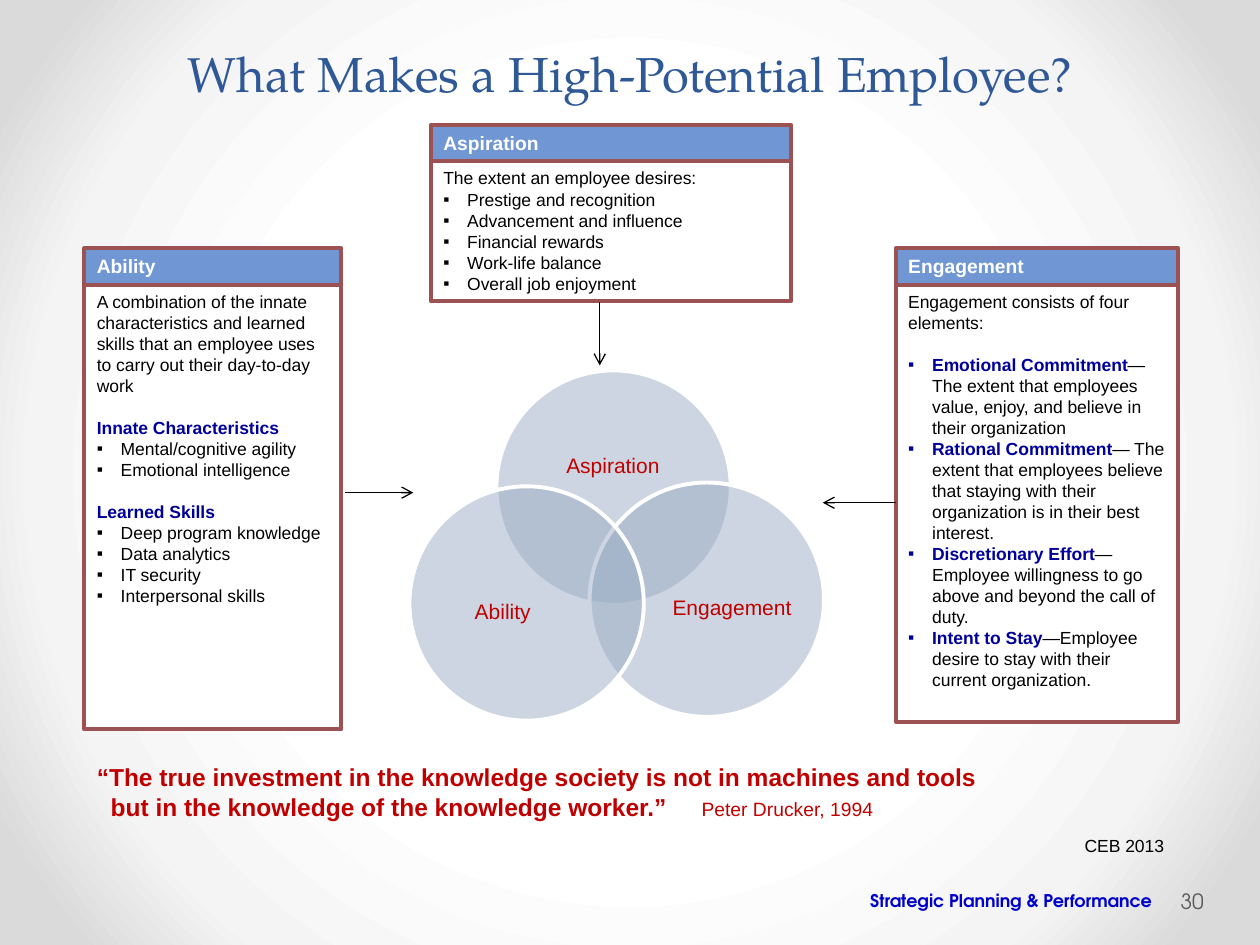
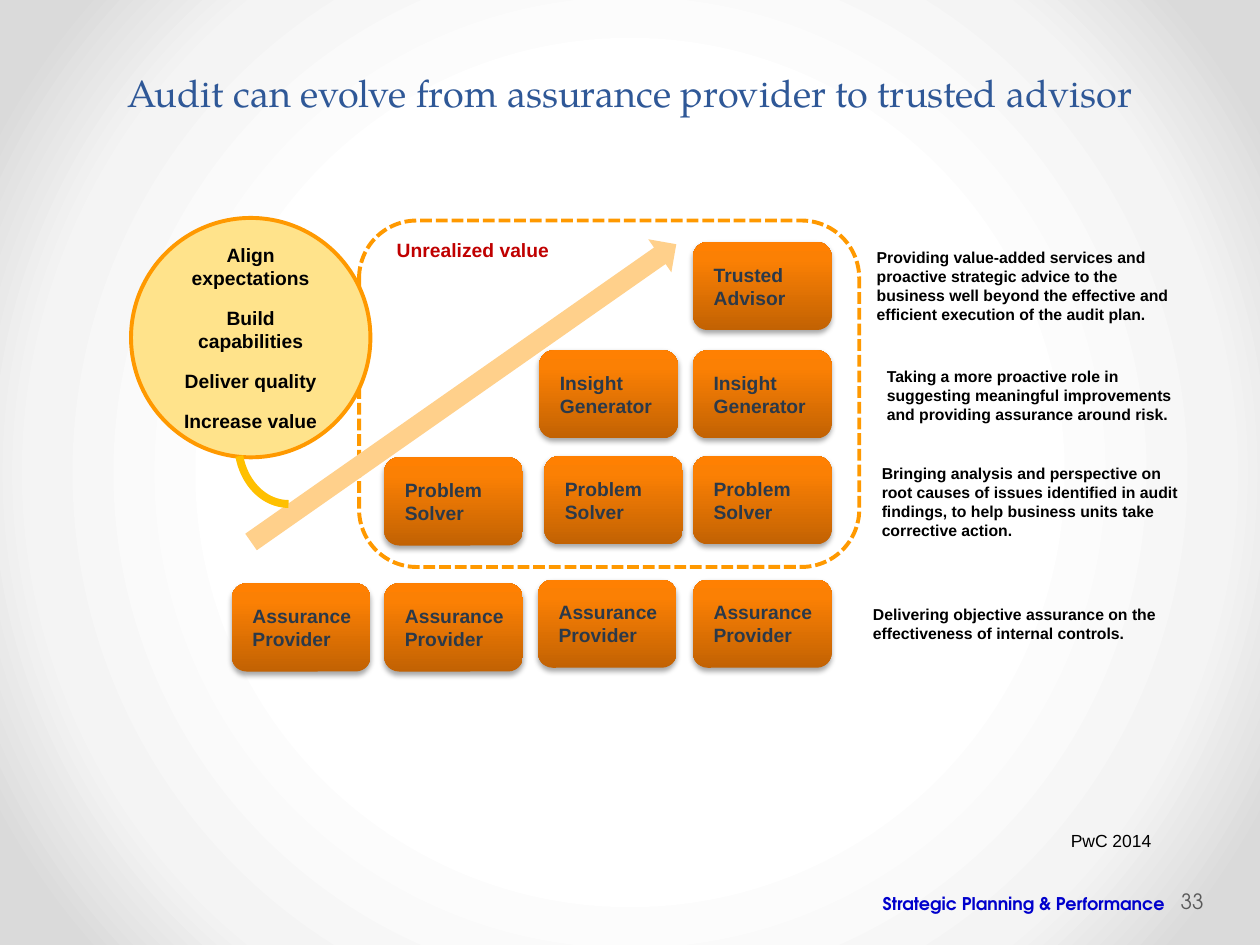
import pptx
import pptx.util
import pptx.dml.color
import pptx.enum.dml
import pptx.enum.shapes
import pptx.enum.text
import pptx.oxml
import pptx.oxml.ns
from dataclasses import dataclass
from lxml import etree

Inches = pptx.util.Inches
Pt = pptx.util.Pt
qn = pptx.oxml.ns.qn
SHAPE = pptx.enum.shapes.MSO_SHAPE
ALIGN = pptx.enum.text.PP_ALIGN
ANCHOR = pptx.enum.text.MSO_ANCHOR

COLORS = {
    "title": "2F5897", "footer": "0000CC", "number": "595959",
    "black": "000000", "white": "FFFFFF", "red": "C00000", "navy": "000099",
    "card_line": "9C5252", "card_head": "7097D3", "venn": "9BADC4",
    "step_text": "2B3949", "orange": "FF9900", "goal": "FFE38B",
    "growth": "FFD08B", "link": "FFC000",
}
BACKDROP = [(50, "FFFFFF"), (76, "F4F4F4"), (92, "DADADA")]
STEP_STOPS = [(0, "C26203"), (80, "FB8004"), (100, "FF8002")]
STEP_SHADOW = {"blurRad": 3.1, "dist": 1.8}


@dataclass
class Line:
    text: str
    lead: str = ""
    bullet: bool = False
    heading: bool = False
    gap: float = 0


CARDS = [
    ("Aspiration", (3.42, 0.99, 2.86, 1.11), [
        Line("The extent an employee desires:"),
        Line("Prestige and recognition", bullet=True),
        Line("Advancement and influence", bullet=True),
        Line("Financial rewards", bullet=True),
        Line("Work-life balance", bullet=True),
        Line("Overall job enjoyment", bullet=True),
    ]),
    ("Ability", (0.67, 1.97, 2.04, 3.53), [
        Line("A combination of the innate characteristics and learned skills "
             "that an employee uses to carry out their day-to-day work"),
        Line("Innate Characteristics", heading=True, gap=12),
        Line("Mental/cognitive agility", bullet=True),
        Line("Emotional intelligence", bullet=True),
        Line("Learned Skills", heading=True, gap=12),
        Line("Deep program knowledge", bullet=True),
        Line("Data analytics", bullet=True),
        Line("IT security", bullet=True),
        Line("Interpersonal skills", bullet=True),
    ]),
    ("Engagement", (7.11, 1.97, 2.24, 3.47), [
        Line("Engagement consists of four elements:"),
        Line("— The extent that employees value, enjoy, and believe in their "
             "organization", "Emotional Commitment", bullet=True, gap=12),
        Line("— The extent that employees believe that staying with their "
             "organization is in their best interest.",
             "Rational Commitment", bullet=True),
        Line("— Employee willingness to go above and beyond the call of duty.",
             "Discretionary Effort", bullet=True),
        Line("—Employee desire to stay with their current organization.",
             "Intent to Stay", bullet=True),
    ]),
]
VENN = [
    ("Aspiration", (3.94, 2.94), (4.18, 3.27, 1.37, 0.84)),
    ("Engagement", (4.68, 3.83), (5.25, 4.31, 1.12, 1.02)),
    ("Ability", (3.25, 3.86), (3.43, 4.34, 1.12, 1.02)),
]
POINTERS = [((7.11, 3.99), (6.53, 3.99)), ((4.76, 2.4), (4.76, 2.9)),
            ((2.74, 3.91), (3.28, 3.91))]
STEPS = [
    ("Assurance Provider", [(1.84, 4.63), (3.05, 4.63), (4.27, 4.6), (5.5, 4.6)]),
    ("Problem Solver", [(3.05, 3.63), (4.32, 3.62), (5.5, 3.62)]),
    ("Insight Generator", [(4.28, 2.78), (5.5, 2.78)]),
    ("Trusted Advisor", [(5.5, 1.92)]),
]
ROLES = [
    ((6.86, 1.92, 2.67, 0.71),
     "Providing value-added services and proactive strategic advice to the "
     "business well beyond the effective and efficient execution of the audit plan."),
    ((6.94, 2.86, 2.6, 0.56),
     "Taking a more proactive role in suggesting meaningful improvements and "
     "providing assurance around risk."),
    ((6.9, 3.63, 2.67, 0.71),
     "Bringing analysis and perspective on root causes of issues identified in "
     "audit findings, to help business units take corrective action."),
    ((6.83, 4.75, 2.6, 0.4),
     "Delivering objective assurance on the effectiveness of internal controls."),
]
GOALS = ["Align expectations", "Build capabilities", "Deliver quality",
         "Increase value"]


def rgb(name):
    return pptx.dml.color.RGBColor.from_string(COLORS[name])


def inches(values):
    return [Inches(value) for value in values]


def sub(parent, tag, **attributes):
    return etree.SubElement(parent, qn(tag), attributes)


def style_run(run, size, color, bold=False, font="Arial"):
    run.font.size = Pt(size)
    run.font.name = font
    run.font.bold = bold
    run.font.color.rgb = rgb(color)


def add_bullet(paragraph):
    properties = paragraph._p.get_or_add_pPr()
    properties.set("marL", str(Inches(0.19)))
    properties.set("indent", str(-Inches(0.19)))
    sub(properties, "a:buFont", typeface="Arial")
    sub(properties, "a:buChar", char="▪")


def write(frame, lines, size, color="black", bold=False, align=ALIGN.LEFT,
          anchor=ANCHOR.TOP, insets=(0.1, 0.05, 0.1, 0.05), font="Arial", wrap=True):
    frame.word_wrap = wrap
    frame.vertical_anchor = anchor
    (frame.margin_left, frame.margin_top,
     frame.margin_right, frame.margin_bottom) = inches(insets)
    for index, line in enumerate(lines):
        paragraph = frame.add_paragraph() if index else frame.paragraphs[0]
        paragraph.text = line.lead or line.text
        paragraph.alignment = align
        if line.gap:
            paragraph.space_before = Pt(line.gap)
        if line.bullet:
            add_bullet(paragraph)
        emphasised = bool(line.lead) or line.heading
        style_run(paragraph.runs[0], size, "navy" if emphasised else color,
                  bold or emphasised, font)
        if line.lead:
            rest = paragraph.add_run()
            rest.text = line.text
            style_run(rest, size, color, bold, font)


def add_label(slide, box, text, size, color="black", **style):
    label = slide.shapes.add_textbox(*inches(box))
    write(label.text_frame, [Line(text)], size, color, **style)
    return label


def add_block(slide, kind, box, fill=None, line=None, width=2.25):
    block = slide.shapes.add_shape(kind, *inches(box))
    block.shadow.inherit = False
    if fill:
        block.fill.solid()
        block.fill.fore_color.rgb = rgb(fill)
    else:
        block.fill.background()
    if line:
        block.line.color.rgb = rgb(line)
        block.line.width = Pt(width)
    else:
        block.line.fill.background()
    return block


def set_gradient(fill, element, stops, angle=None):
    fill.gradient()
    gradient = element.find(".//" + qn("a:gradFill"))
    for child in list(gradient):
        gradient.remove(child)
    stop_list = sub(gradient, "a:gsLst")
    for position, color in stops:
        stop = sub(stop_list, "a:gs", pos=str(position * 1000))
        sub(stop, "a:srgbClr", val=color)
    if angle is None:
        circle = sub(gradient, "a:path", path="circle")
        sub(circle, "a:fillToRect", l="50000", t="50000", r="50000", b="50000")
    else:
        sub(gradient, "a:lin", ang=str(angle * 60000), scaled="0")


def add_pointer(slide, start, end):
    pointer = slide.shapes.add_connector(
        pptx.enum.shapes.MSO_CONNECTOR.STRAIGHT, *inches(start + end))
    pointer.line.color.rgb = rgb("black")
    pointer.line.width = Pt(0.75)
    sub(pointer.line._get_or_add_ln(), "a:tailEnd", type="arrow")
    sub(pointer._element.spPr, "a:effectLst")


def add_card(slide, heading, box, lines):
    left, top, width, height = box
    head_height = 0.29
    body = add_block(slide, SHAPE.RECTANGLE,
                     (left, top + head_height, width, height), "white", "card_line")
    write(body.text_frame, lines, 10)
    head = add_block(slide, SHAPE.RECTANGLE, (left, top, width, head_height),
                     "card_head", "card_line")
    write(head.text_frame, [Line(heading)], 11, "white", bold=True)


def add_venn_circle(slide, name, corner, label_box):
    circle = add_block(slide, SHAPE.OVAL, corner + (1.86, 1.86), "venn", "white")
    color = circle._element.spPr.find(qn("a:solidFill")).find(qn("a:srgbClr"))
    sub(color, "a:alpha", val="50000")
    add_label(slide, label_box, name, 12, "red", align=ALIGN.CENTER,
              anchor=ANCHOR.MIDDLE, insets=(0, 0, 0, 0))


def add_step(slide, name, corner):
    step = add_block(slide, SHAPE.ROUNDED_RECTANGLE, corner + (1.1, 0.7))
    set_gradient(step.fill, step._element, STEP_STOPS, 270)
    effects = step._element.spPr.find(qn("a:effectLst"))
    shadow = sub(effects, "a:outerShdw", dir="5400000", rotWithShape="0",
                 **{key: str(Pt(value)) for key, value in STEP_SHADOW.items()})
    sub(sub(shadow, "a:srgbClr", val=COLORS["black"]), "a:alpha", val="35000")
    write(step.text_frame, [Line(name)], 11, "step_text", bold=True,
          anchor=ANCHOR.MIDDLE, insets=(0.13, 0.05, 0.1, 0.05))


def add_quote(slide):
    quote = add_label(
        slide, (0.67, 6, 8.67, 0.57),
        "“The true investment in the knowledge society is not in machines and tools",
        14, "red", bold=True)
    ending = quote.text_frame.add_paragraph()
    ending.text = "but in the knowledge of the knowledge worker.”"
    properties = ending._p.get_or_add_pPr()
    properties.set("marL", str(Inches(0.11)))
    sub(sub(properties, "a:tabLst"), "a:tab", pos=str(Inches(4.69)), algn="l")
    style_run(ending.runs[0], 14, "red", True)
    author = ending.add_run()
    author.text = "\tPeter Drucker, 1994"
    style_run(author, 11, "red")


def add_titled_slide(deck, title, title_box, size, number, footer_corner):
    slide = deck.slides.add_slide(deck.slide_layouts[5])
    heading = slide.shapes.title
    heading.left, heading.top, heading.width, heading.height = inches(title_box)
    write(heading.text_frame, [Line(title)], size, "title", align=ALIGN.CENTER,
          anchor=ANCHOR.MIDDLE, font="TeX Gyre Pagella")
    add_label(slide, footer_corner + (3.11, 0.4), "Strategic Planning & Performance",
              10, "footer", bold=True, align=ALIGN.RIGHT, anchor=ANCHOR.MIDDLE,
              insets=(0.05, 0.05, 0.1, 0.05), font="TeX Gyre Adventor")
    add_label(slide, (9.34, 6.95, 0.61, 0.4), number, 12, "number",
              anchor=ANCHOR.MIDDLE, insets=(0.03, 0.05, 0.05, 0.05),
              font="TeX Gyre Adventor")
    return slide


def build_potential(deck):
    slide = add_titled_slide(deck, "What Makes a High-Potential Employee?",
                             (0.5, 0.25, 9, 0.66), 28, "30", (6.13, 6.95))
    for circle in VENN:
        add_venn_circle(slide, *circle)
    for card in CARDS:
        add_card(slide, *card)
    for pointer in POINTERS:
        add_pointer(slide, *pointer)
    add_quote(slide)
    add_label(slide, (8.51, 6.58, 0.84, 0.27), "CEB 2013", 10, wrap=False)


def build_evolution(deck):
    slide = add_titled_slide(
        deck, "Audit can evolve from assurance provider to trusted advisor",
        (0.5, 0.3, 9, 0.87), 21.6, "33", (6.23, 6.97))
    add_label(slide, (8.4, 6.54, 0.85, 0.27), "PwC 2014", 10, wrap=False)
    unrealized = add_block(slide, SHAPE.ROUNDED_RECTANGLE, (2.85, 1.75, 3.97, 2.75),
                           line="orange")
    unrealized.line.dash_style = pptx.enum.dml.MSO_LINE.SQUARE_DOT
    goals = add_block(slide, SHAPE.OVAL, (1.04, 1.73, 1.9, 1.9), "goal", "orange")
    write(goals.text_frame,
          [Line(goal, gap=9.5 if index else 0) for index, goal in enumerate(GOALS)],
          11, bold=True, align=ALIGN.CENTER, anchor=ANCHOR.MIDDLE)
    for name, corners in STEPS:
        for corner in corners:
            add_step(slide, name, corner)
    for box, role in ROLES:
        add_label(slide, box, role, 9, bold=True)
    growth = add_block(slide, SHAPE.UP_ARROW, (3.52, 1.06, 0.32, 4.12), "growth")
    growth.rotation = 55
    add_label(slide, (3.05, 1.84, 1.42, 0.29), "Unrealized value", 11, "red",
              bold=True, wrap=False)
    link = add_block(slide, SHAPE.ARC, (1.89, 3.03, 0.8, 0.97), line="link", width=4.5)
    for index, degrees in enumerate((90, 165)):
        link.adjustments[index] = degrees * 0.6


def main():
    deck = pptx.Presentation()
    deck.slide_width, deck.slide_height = inches((10, 7.5))
    master = deck.slide_master
    set_gradient(master.background.fill, master.element, BACKDROP)
    build_potential(deck)
    build_evolution(deck)
    deck.save("out.pptx")


if __name__ == "__main__":
    main()
